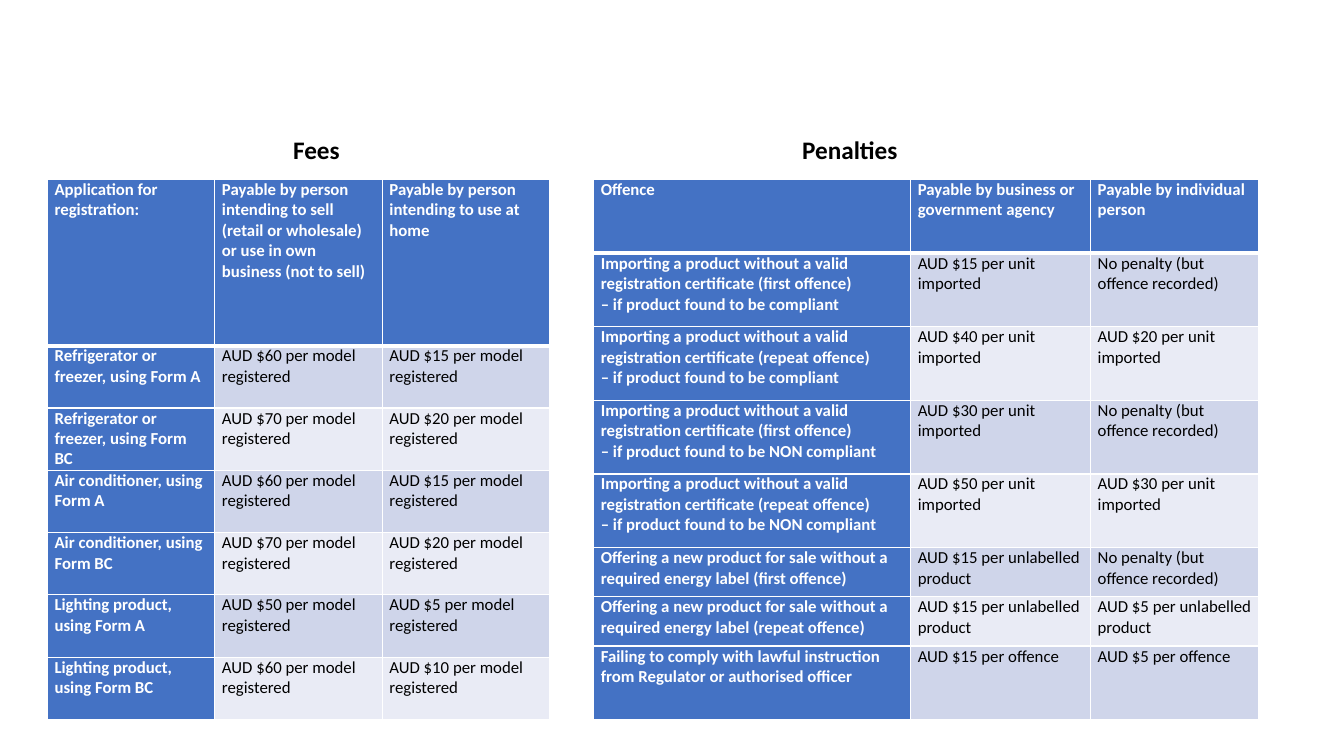
from dataclasses import dataclass

from lxml import etree
from pptx import Presentation
from pptx.dml.color import RGBColor
from pptx.enum.text import MSO_AUTO_SIZE
from pptx.oxml.ns import qn
from pptx.slide import Slide
from pptx.table import _Cell
from pptx.text.text import _Paragraph
from pptx.util import Pt

GROW = MSO_AUTO_SIZE.SHAPE_TO_FIT_TEXT
WHITE = RGBColor(0xFF, 0xFF, 0xFF)
BLACK = RGBColor(0x00, 0x00, 0x00)
BLUE = RGBColor(0x44, 0x72, 0xC4)
BANDS = (RGBColor(0xCF, 0xD5, 0xEA), RGBColor(0xE9, 0xEB, 0xF5))
FONT = "Calibri"
HEADING_TOP, HEADING_WIDTH, HEADING_HEIGHT = 92.2, 725.8, 29
TABLE_TOP = 128.2
CELL_MARGIN = 5.2
THIN, THICK = 1, 3


@dataclass
class Schedule:
    heading: str
    heading_left: float
    left: float
    col_widths: list[float]
    row_heights: list[float]
    rows: list[tuple[str, str, str]]


def per_model(*amounts: int) -> list[str]:
    return [f"AUD ${amount} per model registered" for amount in amounts]


def importing(time: str, finding: str) -> str:
    return ("Importing a product without a valid registration certificate "
            f"({time} offence)\n– if product found to be {finding}")


def offering(time: str) -> str:
    return ("Offering a new product for sale without a required energy label "
            f"({time} offence)")


NO_PENALTY = "No penalty (but offence recorded)"

FEES = Schedule(
    "Fees", 202.3, 33.8, [119.6] * 3, [118.8] + [44.5] * 6,
    [
        ("Application for registration:",
         "Payable by person intending to sell (retail or wholesale) "
         "or use in own business (not to sell)",
         "Payable by person intending to use at home"),
        ("Refrigerator or freezer, using Form A", *per_model(60, 15)),
        ("Refrigerator or freezer, using Form BC", *per_model(70, 20)),
        ("Air conditioner, using Form A", *per_model(60, 15)),
        ("Air conditioner, using Form BC", *per_model(70, 20)),
        ("Lighting product, using Form A", *per_model(50, 5)),
        ("Lighting product, using Form BC", *per_model(60, 10)),
    ],
)

PENALTIES = Schedule(
    "Penalties", 565.9, 424, [226.4, 128.5, 120.2],
    [52.6] * 5 + [35.2] * 2 + [52.6],
    [
        ("Offence", "Payable by business or government agency",
         "Payable by individual person"),
        (importing("first", "compliant"), "AUD $15 per unit imported", NO_PENALTY),
        (importing("repeat", "compliant"), "AUD $40 per unit imported",
         "AUD $20 per unit imported"),
        (importing("first", "NON compliant"), "AUD $30 per unit imported",
         NO_PENALTY),
        (importing("repeat", "NON compliant"), "AUD $50 per unit imported",
         "AUD $30 per unit imported"),
        (offering("first"), "AUD $15 per unlabelled product", NO_PENALTY),
        (offering("repeat"), "AUD $15 per unlabelled product",
         "AUD $5 per unlabelled product"),
        ("Failing to comply with lawful instruction from Regulator "
         "or authorised officer",
         "AUD $15 per offence", "AUD $5 per offence"),
    ],
)


def add_text(p: _Paragraph, text: str, size: float, color: RGBColor,
             bold: bool) -> None:
    """Add one run per line, with line breaks between them."""
    for i, line in enumerate(text.split("\n")):
        if i:
            p.add_line_break()
        r = p.add_run()
        r.text = line
        r.font.name = FONT
        r.font.size = Pt(size)
        r.font.bold = bold
        r.font.color.rgb = color


def set_borders(cell: _Cell, top: float, bottom: float) -> None:
    tc_pr = cell._tc.get_or_add_tcPr()
    sides = {"lnL": THIN, "lnR": THIN, "lnT": top, "lnB": bottom}
    for side, width in sides.items():
        ln = etree.SubElement(tc_pr, qn(f"a:{side}"), w=str(Pt(width)))
        fill = etree.SubElement(ln, qn("a:solidFill"))
        etree.SubElement(fill, qn("a:srgbClr"), val=str(WHITE))


def fill_cell(cell: _Cell, text: str, row: int, col: int) -> None:
    is_label = row == 0 or col == 0
    cell.margin_left = cell.margin_right = Pt(CELL_MARGIN)
    cell.margin_top = cell.margin_bottom = Pt(0)
    set_borders(cell, THICK if row == 1 else THIN, THICK if row == 0 else THIN)
    cell.fill.solid()
    cell.fill.fore_color.rgb = BLUE if is_label else BANDS[(row - 1) % 2]
    add_text(cell.text_frame.paragraphs[0], text, 12,
             WHITE if is_label else BLACK, is_label)


def add_schedule_table(s: Slide, schedule: Schedule) -> None:
    widths, heights = schedule.col_widths, schedule.row_heights
    table = s.shapes.add_table(
        len(heights), len(widths), Pt(schedule.left), Pt(TABLE_TOP),
        Pt(sum(widths)), Pt(sum(heights))).table
    table.first_col = True
    for column, width in zip(table.columns, widths):
        column.width = Pt(width)
    for row, (height, texts) in enumerate(zip(heights, schedule.rows)):
        table.rows[row].height = Pt(height)
        for col, text in enumerate(texts):
            fill_cell(table.cell(row, col), text, row, col)


def add_heading(s: Slide, schedule: Schedule) -> None:
    sp = s.shapes.add_textbox(Pt(schedule.heading_left), Pt(HEADING_TOP),
                              Pt(HEADING_WIDTH), Pt(HEADING_HEIGHT))
    tf = sp.text_frame
    tf.word_wrap = True
    tf.auto_size = GROW
    add_text(tf.paragraphs[0], schedule.heading, 18, BLACK, True)


def main() -> None:
    prs = Presentation()
    prs.slide_width, prs.slide_height = Pt(960), Pt(540)
    s = prs.slides.add_slide(prs.slide_layouts[6])
    for schedule in (FEES, PENALTIES):
        add_schedule_table(s, schedule)
    for schedule in (PENALTIES, FEES):
        add_heading(s, schedule)
    prs.save("out.pptx")


if __name__ == "__main__":
    main()
